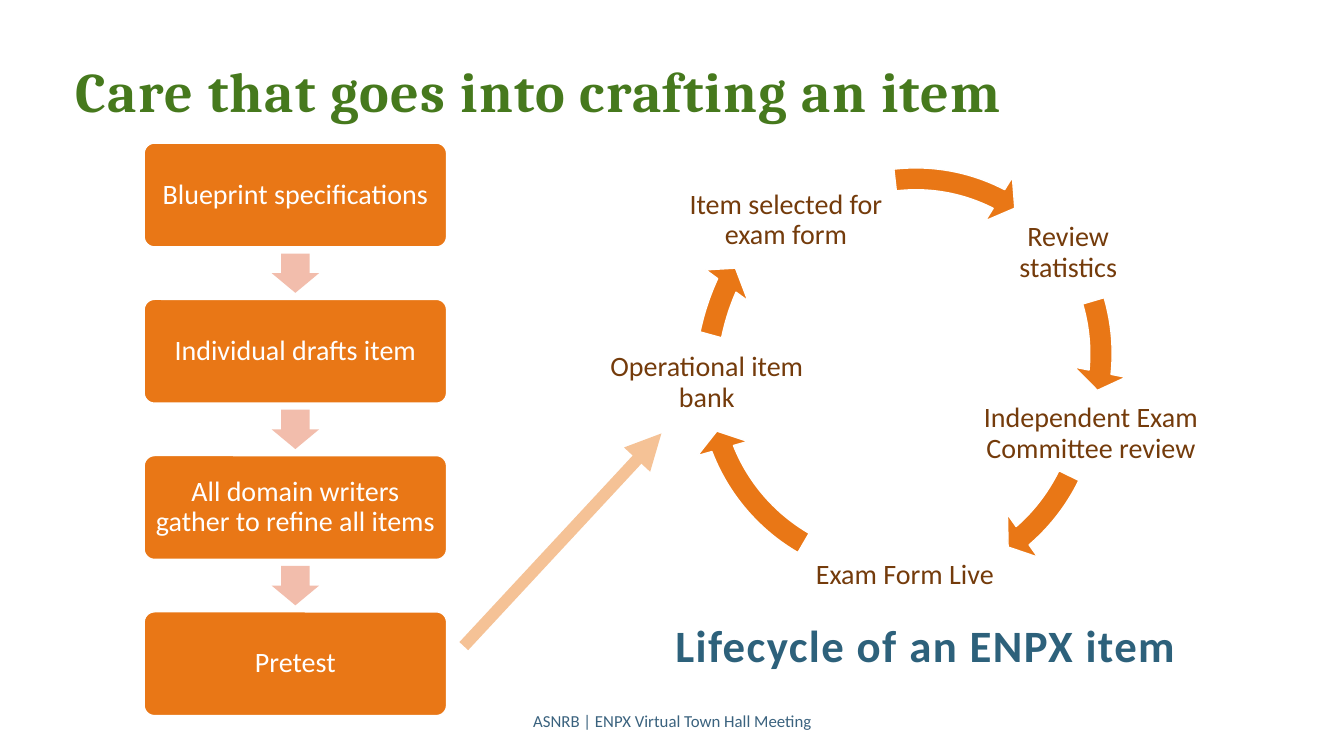
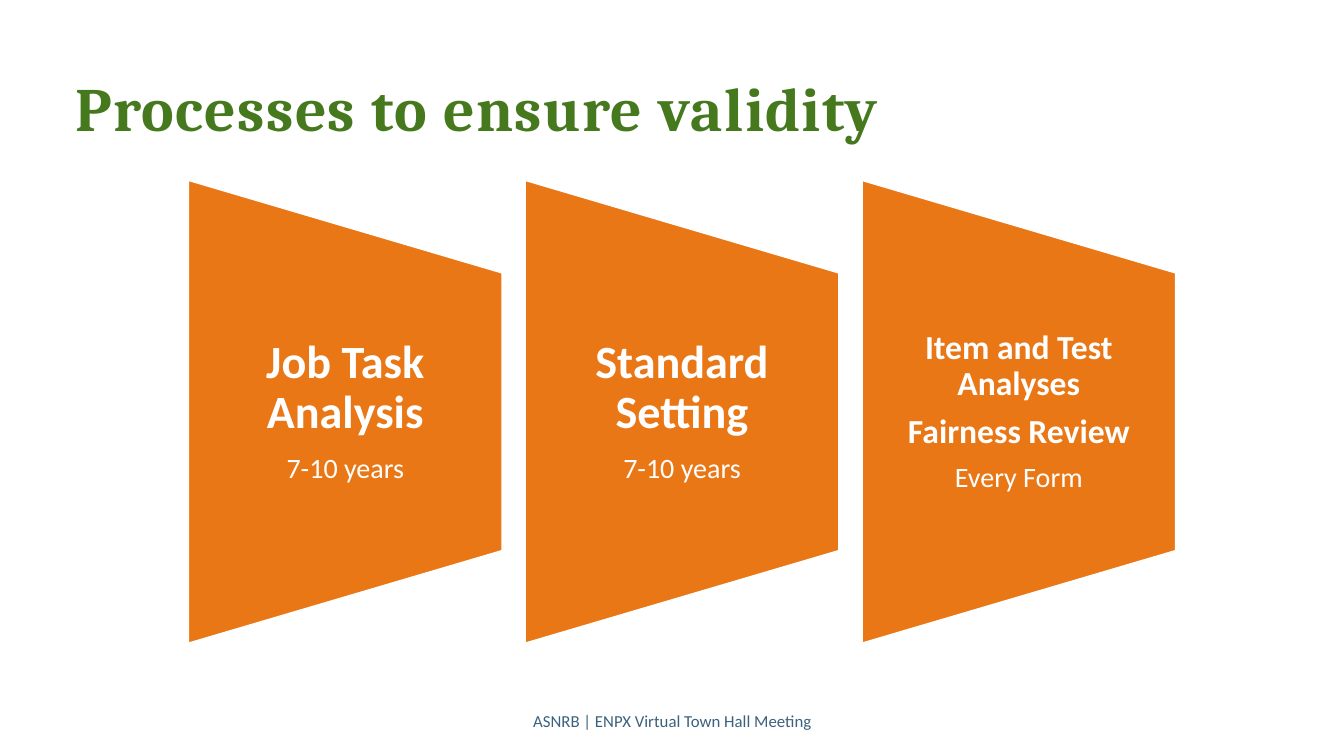
from lxml.etree import SubElement
from pptx import Presentation
from pptx.dml.color import RGBColor
from pptx.enum.shapes import MSO_CONNECTOR, MSO_SHAPE
from pptx.enum.text import MSO_ANCHOR, MSO_AUTO_SIZE, PP_ALIGN
from pptx.oxml.ns import qn
from pptx.util import Inches, Pt

GREEN = RGBColor(0x46, 0x79, 0x1D)
ORANGE = RGBColor(0xE9, 0x77, 0x16)
PALE_ORANGE = RGBColor(0xF5, 0xC2, 0x96)
PINK = RGBColor(0xF2, 0xBD, 0xAC)
BROWN = RGBColor(0x74, 0x3B, 0x0B)
TEAL = RGBColor(0x2D, 0x61, 0x7B)
FOOTER_BLUE = RGBColor(0x3A, 0x62, 0x7E)
WHITE = RGBColor(0xFF, 0xFF, 0xFF)
HEADING_FONT = "Cambria"
BODY_FONT = "Calibri"

FOOTER = "ASNRB | ENPX Virtual Town Hall Meeting"
DRAFTING_TITLE = "Care that goes into crafting an item"
LIFECYCLE_CAPTION = "Lifecycle of an ENPX item"
VALIDITY_TITLE = "Processes to ensure validity"

DRAFTING_STEPS = [
    "Blueprint specifications",
    "Individual drafts item",
    "All domain writers gather to refine all items",
    "Pretest",
]

# Label text and box: left, top, width, height
LIFECYCLE_LABELS = [
    ("Review statistics", (9.86, 2.04, 1.47, 0.94)),
    ("Independent Exam Committee review", (9.42, 3.88, 2.8, 0.85)),
    ("Exam Form Live", (7.94, 5.4, 2.07, 0.61)),
    ("Operational item bank", (6, 3.32, 2.02, 0.96)),
    ("Item selected for exam form", (6.72, 1.68, 2.15, 1.01)),
]

# Arrow box, then the angles of its head and its start in degrees
LIFECYCLE_ARROWS = [
    ((6.92, 1.38, 4.26, 4.26), 5.62, 343.7),
    ((6.79, 1.77, 4.26, 4.26), 49.17, 25.95),
    ((6.78, 1.64, 4.26, 4.26), 158.67, 120.17),
    ((6.74, 1.41, 4.26, 4.82), 210.76, 195.3),
    ((7, 1.52, 4.17, 4.26), 296.15, 263.67),
]

# Headings, heading size, frequency, side inset
VALIDITY_PROCESSES = [
    (["Job Task Analysis"], 33, "7-10 years", 0.23),
    (["Standard Setting"], 33, "7-10 years", 0.23),
    (["Item and Test Analyses", "Fairness Review"], 24, "Every Form", 0.17),
]


def write_text(shape, lines, size=20, color=BROWN, font=BODY_FONT, bold=False,
               align=PP_ALIGN.CENTER, line_spacing=0.9, tracking=0, insets=(0.1, 0.05)):
    """Fill a shape with lines; a line is a string or (string, size, bold)."""
    frame = shape.text_frame
    frame.word_wrap = True
    frame.auto_size = MSO_AUTO_SIZE.NONE
    frame.vertical_anchor = MSO_ANCHOR.MIDDLE
    frame.margin_left = frame.margin_right = Inches(insets[0])
    frame.margin_top = frame.margin_bottom = Inches(insets[1])
    for index, line in enumerate(lines):
        words, line_size, line_bold = (line, size, bold) if isinstance(line, str) else line
        paragraph = frame.paragraphs[0] if index == 0 else frame.add_paragraph()
        paragraph.alignment = align
        paragraph.line_spacing = line_spacing
        if index < len(lines) - 1:
            paragraph.space_after = Pt(round(line_size * 0.35, 1))
        run = paragraph.add_run()
        run.text = words
        run.font.name = font
        run.font.size = Pt(line_size)
        run.font.bold = line_bold
        run.font.color.rgb = color
        if tracking:
            run.font._element.set("spc", str(tracking * 100))


def add_text(slide, box, lines, **text_format):
    text_box = slide.shapes.add_textbox(*map(Inches, box))
    write_text(text_box, lines, **text_format)


def add_filled_shape(slide, kind, box, fill=ORANGE, outline=WHITE, adjustments=()):
    shape = slide.shapes.add_shape(kind, *map(Inches, box))
    shape.shadow.inherit = False
    shape.fill.solid()
    shape.fill.fore_color.rgb = fill
    if outline is None:
        shape.line.fill.background()
    else:
        shape.line.color.rgb = outline
        shape.line.width = Pt(1)
    for index, value in enumerate(adjustments):
        shape.adjustments[index] = value
    return shape


def add_thick_arrow(slide, start, end):
    arrow = slide.shapes.add_connector(
        MSO_CONNECTOR.STRAIGHT, *map(Inches, start + end))
    arrow.line.color.rgb = PALE_ORANGE
    arrow.line.width = Pt(8.5)
    SubElement(arrow.line._get_or_add_ln(), qn("a:tailEnd"), type="triangle")
    SubElement(arrow._element.spPr, qn("a:effectLst"))


def add_titled_slide(presentation, title, box, size):
    slide = presentation.slides.add_slide(presentation.slide_layouts[5])
    placeholder = slide.shapes.title
    placeholder.left, placeholder.top, placeholder.width, placeholder.height = map(Inches, box)
    write_text(placeholder, [title], size=size, color=GREEN, font=HEADING_FONT, bold=True,
               align=PP_ALIGN.LEFT, line_spacing=0.8, tracking=1)
    add_text(slide, (4.42, 6.95, 4.5, 0.4), [FOOTER], size=12, color=FOOTER_BLUE,
             line_spacing=1.0)
    return slide


def add_drafting_steps(slide):
    left, top, width, height, pitch = 1.43, 1.42, 3, 1.03, 1.55
    arrow_width, arrow_height = 0.47, 0.39
    for index, step in enumerate(DRAFTING_STEPS):
        step_top = top + index * pitch
        card = add_filled_shape(slide, MSO_SHAPE.ROUNDED_RECTANGLE,
                                (left, step_top, width, height), adjustments=(0.1,))
        write_text(card, [step], color=WHITE, insets=(0.08, 0.08))
        if index < len(DRAFTING_STEPS) - 1:
            arrow_left = left + (width - arrow_width) / 2
            arrow_top = step_top + (height + pitch - arrow_height) / 2
            add_filled_shape(slide, MSO_SHAPE.DOWN_ARROW,
                             (arrow_left, arrow_top, arrow_width, arrow_height),
                             fill=PINK, outline=None, adjustments=(0.6, 0.5))


def add_lifecycle(slide):
    angle_unit = 0.6  # adjustment values per degree: 60000 / 100000
    for box, head_angle, start_angle in LIFECYCLE_ARROWS:
        add_filled_shape(slide, MSO_SHAPE.CIRCULAR_ARROW, box,
                         adjustments=(0.052, 3.357, head_angle * angle_unit,
                                      start_angle * angle_unit, 0.061))
    for label, box in LIFECYCLE_LABELS:
        add_text(slide, box, [label], insets=(0.03, 0.03))
    add_text(slide, (5.03, 5.72, 8.3, 1.45), [LIFECYCLE_CAPTION], size=32, color=TEAL,
             bold=True, line_spacing=0.8, tracking=1)


def add_validity_processes(slide):
    left, middle, width, height, pitch = 1.87, 4.085, 3.11, 4.59, 3.34
    text_height = 2.75
    for index, (headings, size, frequency, inset) in enumerate(VALIDITY_PROCESSES):
        card_left = left + index * pitch
        # The shape is turned on its side, so its box swaps width and height
        card = add_filled_shape(slide, MSO_SHAPE.FLOWCHART_MANUAL_OPERATION,
                                (card_left + (width - height) / 2, middle - width / 2,
                                 height, width))
        card.rotation = 270
        add_text(slide, (card_left, middle - text_height / 2, width, text_height),
                 headings + [(frequency, 20, False)], size=size, color=WHITE, bold=True,
                 insets=(inset, 0))


def main():
    presentation = Presentation()
    presentation.slide_width = Inches(13.33)
    presentation.slide_height = Inches(7.5)

    drafting = add_titled_slide(presentation, DRAFTING_TITLE, (0.65, 0.23, 12.4, 1.45), 40)
    add_lifecycle(drafting)
    add_thick_arrow(drafting, (4.6, 6.41), (6.56, 4.3))
    add_drafting_steps(drafting)

    validity = add_titled_slide(presentation, VALIDITY_TITLE, (0.65, 0.4, 11.38, 1.45), 44)
    add_validity_processes(validity)

    presentation.save("out.pptx")


if __name__ == "__main__":
    main()
